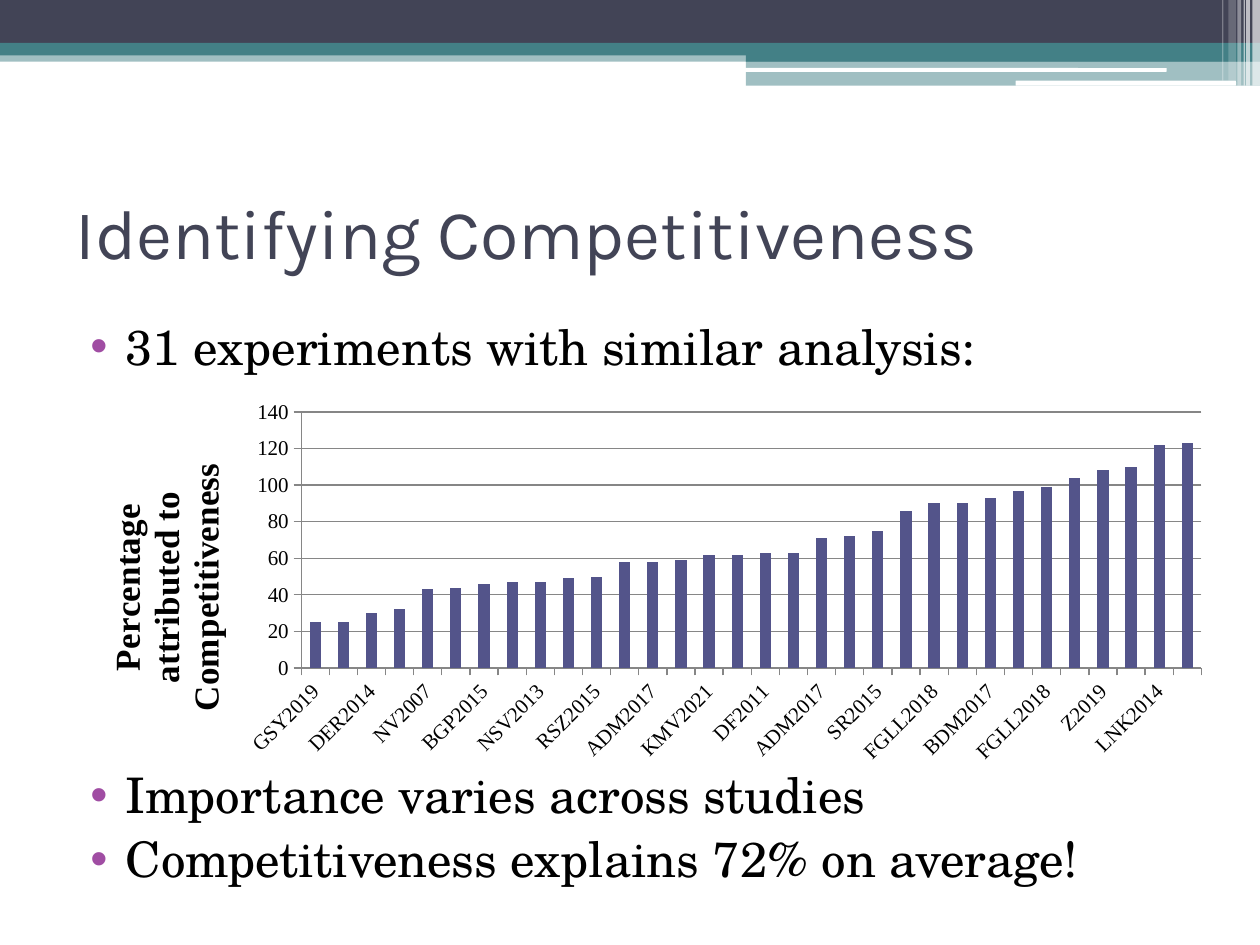
from dataclasses import dataclass

from lxml.etree import SubElement
from pptx import Presentation
from pptx.chart.data import CategoryChartData
from pptx.dml.color import RGBColor
from pptx.enum.chart import XL_CHART_TYPE, XL_TICK_MARK
from pptx.enum.shapes import MSO_SHAPE
from pptx.enum.text import MSO_ANCHOR, PP_ALIGN
from pptx.oxml import parse_xml
from pptx.oxml.ns import nsdecls, qn
from pptx.util import Inches, Pt

# Lengths are cells of a grid with 1000 columns and 750 rows
COLUMNS, ROWS = 1000, 750
SLIDE_WIDTH, SLIDE_HEIGHT = Inches(10), Inches(7.5)

NAVY, TEAL, WHITE, BLACK = "424456", "438086", "FFFFFF", "000000"
PURPLE, BAR_COLOR, GRID_COLOR = "A04DA3", "53548A", "868686"
TITLE_FONT, BODY_FONT, CHART_FONT = "Karla", "TeX Gyre Schola", "Times New Roman"


@dataclass
class Box:
    column: float
    row: float
    columns: float
    rows: float

    def place(self) -> tuple[int, int, int, int]:
        return (
            round(SLIDE_WIDTH * self.column / COLUMNS),
            round(SLIDE_HEIGHT * self.row / ROWS),
            round(SLIDE_WIDTH * self.columns / COLUMNS),
            round(SLIDE_HEIGHT * self.rows / ROWS),
        )


@dataclass
class Band:
    box: Box
    color: str
    opacity: int = 100
    rounded: bool = False


BANDS = [
    Band(Box(0, 40, 1000, 9), TEAL, 50),
    Band(Box(0, 0, 1000, 34), NAVY),
    Band(Box(0, 34, 1000, 10), TEAL),
    Band(Box(592, 39, 408, 10), TEAL),
    Band(Box(592, 48, 408, 20), TEAL, 50),
    Band(Box(591, 54, 335, 3), WHITE, rounded=True),
    Band(Box(806, 64, 175, 4), WHITE, rounded=True),
    # Stripes in the top right corner
    Band(Box(994, 0, 6, 68), WHITE, 65),
    Band(Box(989, 0, 3, 68), WHITE, 65),
    Band(Box(987, 0, 1, 68), WHITE, 60),
    Band(Box(982, 0, 3, 68), WHITE, 40),
    Band(Box(975, 0, 6, 64), WHITE, 20),
    Band(Box(970, 0, 1, 64), WHITE, 30),
]

BULLETS = [
    (Box(50, 246, 900, 60), ["31 experiments with similar analysis:"]),
    (Box(50, 602, 900, 117), ["Importance varies across studies",
                              "Competitiveness explains 72% on average!"]),
]

STUDIES = (
    "GSY2019 Z2019 DER2014 KP2012 NV2007 BKS2012 BGP2015 BNO2014 "
    "NSV2013 BDM2017 RSZ2015 GSY2019 ADM2017 HS2017 KMV2021 RWZ2017 "
    "DF2011 BRV2021 ADM2017 ACSST2016 SR2015 SPG2018 FGLL2018 D2012 "
    "BDM2017 HP2011 FGLL2018 Z2019 Z2019 MPL2015 LNK2014 CWZ2016"
).split()
PERCENTAGES = [25, 25, 30, 32, 43, 44, 46, 47, 47, 49, 50, 58, 58, 59, 62, 62,
               63, 63, 71, 72, 75, 86, 90, 90, 93, 97, 99, 104, 108, 110, 122, 123]


def rgb(color: str) -> RGBColor:
    return RGBColor.from_string(color)


def apply(target, values: dict) -> None:
    for name, value in values.items():
        setattr(target, name, value)


def format_font(font, name: str, size: float, color: str, bold: bool = False) -> None:
    apply(font, {"name": name, "size": Pt(size), "bold": bold})
    font.color.rgb = rgb(color)


def draw_band(slide, band: Band) -> None:
    kind = MSO_SHAPE.ROUNDED_RECTANGLE if band.rounded else MSO_SHAPE.RECTANGLE
    shape = slide.shapes.add_shape(kind, *band.box.place())
    shape.shadow.inherit = False
    shape.line.fill.background()
    shape.fill.solid()
    shape.fill.fore_color.rgb = rgb(band.color)
    if band.opacity < 100:
        color = shape.fill._xPr.find(".//" + qn("a:srgbClr"))
        SubElement(color, qn("a:alpha"), val=str(band.opacity * 1000))


def write_title(slide, text: str) -> None:
    title = slide.shapes.title
    apply(title, dict(zip(("left", "top", "width", "height"),
                          Box(50, 125, 900, 117).place())))
    title.text_frame.text = text
    title.text_frame.vertical_anchor = MSO_ANCHOR.MIDDLE
    paragraph = title.text_frame.paragraphs[0]
    paragraph.alignment = PP_ALIGN.LEFT
    format_font(paragraph.runs[0].font, TITLE_FONT, 40, NAVY)


def write_bullets(slide, box: Box, lines: list[str]) -> None:
    frame = slide.shapes.add_textbox(*box.place()).text_frame
    frame.word_wrap = True
    frame.text = "\n".join(lines)
    for paragraph in frame.paragraphs:
        paragraph.space_before = Pt(3)
        format_font(paragraph.runs[0].font, BODY_FONT, 28, BLACK)
        properties = paragraph._p.get_or_add_pPr()
        properties.set("marL", str(Inches(0.4)))
        properties.set("indent", str(Inches(-0.28)))
        color = SubElement(properties, qn("a:buClr"))
        SubElement(color, qn("a:srgbClr"), val=PURPLE)
        SubElement(properties, qn("a:buFont"), typeface="Arial")
        SubElement(properties, qn("a:buChar"), char="•")


def manual_layout(**values):
    """Layout element with shares of the chart's size."""
    layout = parse_xml(f"<c:layout {nsdecls('c')}><c:manualLayout/></c:layout>")
    for name, value in values.items():
        SubElement(layout[0], qn("c:" + name), val=str(value))
    return layout


def draw_chart(slide, box: Box) -> None:
    data = CategoryChartData()
    data.categories = STUDIES
    data.add_series("Series 1", PERCENTAGES)
    chart = slide.shapes.add_chart(
        XL_CHART_TYPE.COLUMN_CLUSTERED, *box.place(), data).chart
    apply(chart, {"has_legend": False, "has_title": False})
    format_font(chart.font, BODY_FONT, 10, BLACK)

    # Columns
    plot = chart.plots[0]
    apply(plot, {"gap_width": 150, "vary_by_categories": False})
    fill = plot.series[0].format.fill
    fill.solid()
    fill.fore_color.rgb = rgb(BAR_COLOR)

    # Axes
    value_axis, category_axis = chart.value_axis, chart.category_axis
    apply(value_axis, {"minimum_scale": 0, "maximum_scale": 140, "major_unit": 20,
                       "has_major_gridlines": True})
    for axis in (value_axis, category_axis):
        axis.major_tick_mark = XL_TICK_MARK.OUTSIDE
        format_font(axis.tick_labels.font, CHART_FONT, 12, BLACK)
    for line in (value_axis.format.line, category_axis.format.line,
                 value_axis.major_gridlines.format.line):
        line.color.rgb = rgb(GRID_COLOR)
        line.width = Pt(0.75)
    category_axis._element.find(".//" + qn("a:bodyPr")).set("rot", "-2700000")

    # Axis title and plot area position
    title = value_axis.axis_title
    title.text_frame.text = "Percentage attributed to Competitiveness"
    format_font(title.text_frame.paragraphs[0].runs[0].font,
                CHART_FONT, 20, BLACK, bold=True)
    body = title._element.find(".//" + qn("a:bodyPr"))
    apply_rotation = {"rot": "-5400000", "vert": "horz"}
    for name, value in apply_rotation.items():
        body.set(name, value)
    for layout in title._element.findall(qn("c:layout")):
        title._element.remove(layout)
    title._element.find(qn("c:tx")).addnext(
        manual_layout(xMode="edge", yMode="edge", x=0.03, y=0.17))
    plot_area = chart._chartSpace.find(".//" + qn("c:plotArea"))
    for layout in plot_area.findall(qn("c:layout")):
        plot_area.remove(layout)
    plot_area.insert(0, manual_layout(layoutTarget="inner", xMode="edge", yMode="edge",
                                      x=0.205, y=0.05, w=0.775, h=0.68))


def main() -> None:
    presentation = Presentation()
    apply(presentation, {"slide_width": SLIDE_WIDTH, "slide_height": SLIDE_HEIGHT})
    slide = presentation.slides.add_slide(presentation.slide_layouts[5])
    for band in BANDS:
        draw_band(slide, band)
    write_title(slide, "Identifying Competitiveness")
    for box, lines in BULLETS:
        write_bullets(slide, box, lines)
    draw_chart(slide, Box(50, 312, 922, 299))
    presentation.save("out.pptx")


if __name__ == "__main__":
    main()
